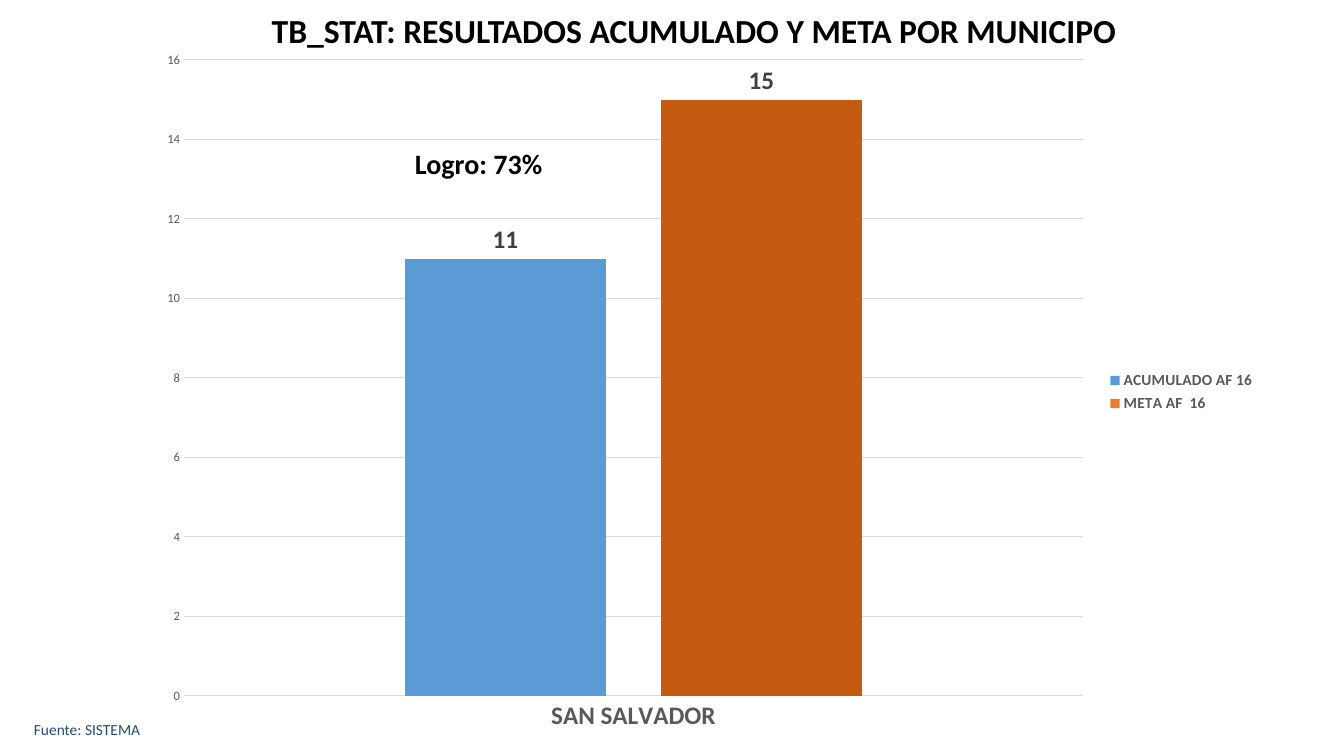
from lxml.etree import SubElement
from pptx import Presentation
from pptx.chart.data import CategoryChartData as ChartData
from pptx.dml.color import RGBColor
from pptx.enum.chart import XL_CHART_TYPE as ChartType
from pptx.enum.chart import XL_LABEL_POSITION as LabelPosition
from pptx.enum.chart import XL_LEGEND_POSITION as LegendPosition
from pptx.enum.chart import XL_TICK_MARK as TickMark
from pptx.enum.text import MSO_ANCHOR as Anchor
from pptx.enum.text import PP_ALIGN as Align
from pptx.oxml import parse_xml
from pptx.oxml.ns import nsdecls, qn
from pptx.util import Pt

EMU_PER_PX = 914400 / 100.8  # 100.8 px to the inch


def px(length):
    return round(length * EMU_PER_PX)


def color(value):
    return RGBColor.from_string(value)


def style_font(font, size, ink, bold=False):
    for name, value in {"name": "Calibri", "size": Pt(size), "bold": bold}.items():
        setattr(font, name, value)
    font.color.rgb = color(ink)


class ResultsSlide:
    GRAY, RULE, LABEL = "595959", "D9D9D9", "404040"

    def __init__(self, deck):
        self.page = deck.slides.add_slide(deck.slide_layouts[5])

    def fill_text(self, box, text, size, ink, bold=False, align=Align.LEFT,
                  anchor=Anchor.TOP, wrap=True):
        frame = box.text_frame
        frame.word_wrap = wrap
        frame.vertical_anchor = anchor
        para = frame.paragraphs[0]
        para.alignment = align
        span = para.add_run()
        span.text = text
        style_font(span.font, size, ink, bold)

    def title(self, text, left, top, width, height):
        box = self.page.shapes.title
        place = {"left": left, "top": top, "width": width, "height": height}
        for name, value in place.items():
            setattr(box, name, px(value))
        self.fill_text(box, text, 24, "000000", True, Align.CENTER, wrap=False)

    def text(self, text, left, top, width, height, size, ink, bold=False):
        box = self.page.shapes.add_textbox(*map(px, (left, top, width, height)))
        self.fill_text(box, text, size, ink, bold)

    def rule(self, line):
        line.color.rgb = color(self.RULE)
        line.width = Pt(0.75)

    def columns(self, category, series, left, top, width, height, plot_area):
        data = ChartData()
        data.categories = [category]
        for name, value, *_ in series:
            data.add_series(name, [value])
        chart = self.page.shapes.add_chart(
            ChartType.COLUMN_CLUSTERED, *map(px, (left, top, width, height)), data).chart
        style_font(chart.font, 10, "000000")
        chart.has_title = False

        # Axes
        category_axis, value_axis = chart.category_axis, chart.value_axis
        for axis, size, bold in ((category_axis, 18, True), (value_axis, 9, False)):
            axis.major_tick_mark = axis.minor_tick_mark = TickMark.NONE
            style_font(axis.tick_labels.font, size, self.GRAY, bold)
        self.rule(category_axis.format.line)
        scale = {"minimum_scale": 0, "maximum_scale": 16, "major_unit": 2}
        for name, value in scale.items():
            setattr(value_axis, name, value)
        value_axis.format.line.fill.background()
        self.rule(value_axis.major_gridlines.format.line)

        # Legend
        chart.has_legend = True
        chart.legend.position = LegendPosition.RIGHT
        chart.legend.include_in_layout = False
        style_font(chart.legend.font, 11, self.GRAY, True)

        # Columns and their values
        plot = chart.plots[0]
        plot.vary_by_categories = False
        plot.gap_width, plot.overlap = 219, -27
        for bars, (_, _, legend_fill, bar_fill) in zip(plot.series, series):
            formats = [bars.format]
            if bar_fill != legend_fill:
                formats.append(bars.points[0].format)
            for form, ink in zip(formats, (legend_fill, bar_fill)):
                form.fill.solid()
                form.fill.fore_color.rgb = color(ink)
            labels = bars.data_labels
            labels.show_value = True
            labels.position = LabelPosition.OUTSIDE_END
            style_font(labels.font, 18, self.LABEL, True)

        # Clear background and fixed plot area
        root = chart.element
        root.find(qn("c:chart")).addnext(parse_xml(
            f'<c:spPr {nsdecls("c", "a")}><a:noFill/><a:ln><a:noFill/></a:ln></c:spPr>'))
        area = root.find(".//" + qn("c:plotArea"))
        for old in area.findall(qn("c:layout")):
            area.remove(old)
        layout = parse_xml(f'<c:layout {nsdecls("c")}><c:manualLayout/></c:layout>')
        area.insert(0, layout)
        x, y, wide, high = plot_area
        settings = {"layoutTarget": "inner", "xMode": "edge", "yMode": "edge",
                    "x": (x - left) / width, "y": (y - top) / height,
                    "w": wide / width, "h": high / height}
        for name, value in settings.items():
            SubElement(layout[0], qn("c:" + name), val=str(value))


def main():
    deck = Presentation()
    deck.slide_width, deck.slide_height = px(1344), px(756)
    slide = ResultsSlide(deck)

    # Heading and source
    slide.title("TB_STAT: RESULTADOS ACUMULADO Y META POR MUNICIPO", 254, 5, 880, 50)
    slide.text("Fuente: SISTEMA", 24, 715, 230, 40, 11, "1F4E79")

    # Result against target: name, value, legend colour, column colour
    series = [("ACUMULADO AF 16", 11, "5B9BD5", "5B9BD5"),
              ("META AF  16", 15, "ED7D31", "C55A11")]
    slide.columns("SAN SALVADOR", series, 145, 39, 1121, 706, (184, 60, 899, 636))

    # Achievement
    slide.text("Logro: 73%", 405, 142, 148, 44, 20, "000000", True)
    deck.save("out.pptx")


if __name__ == "__main__":
    main()
